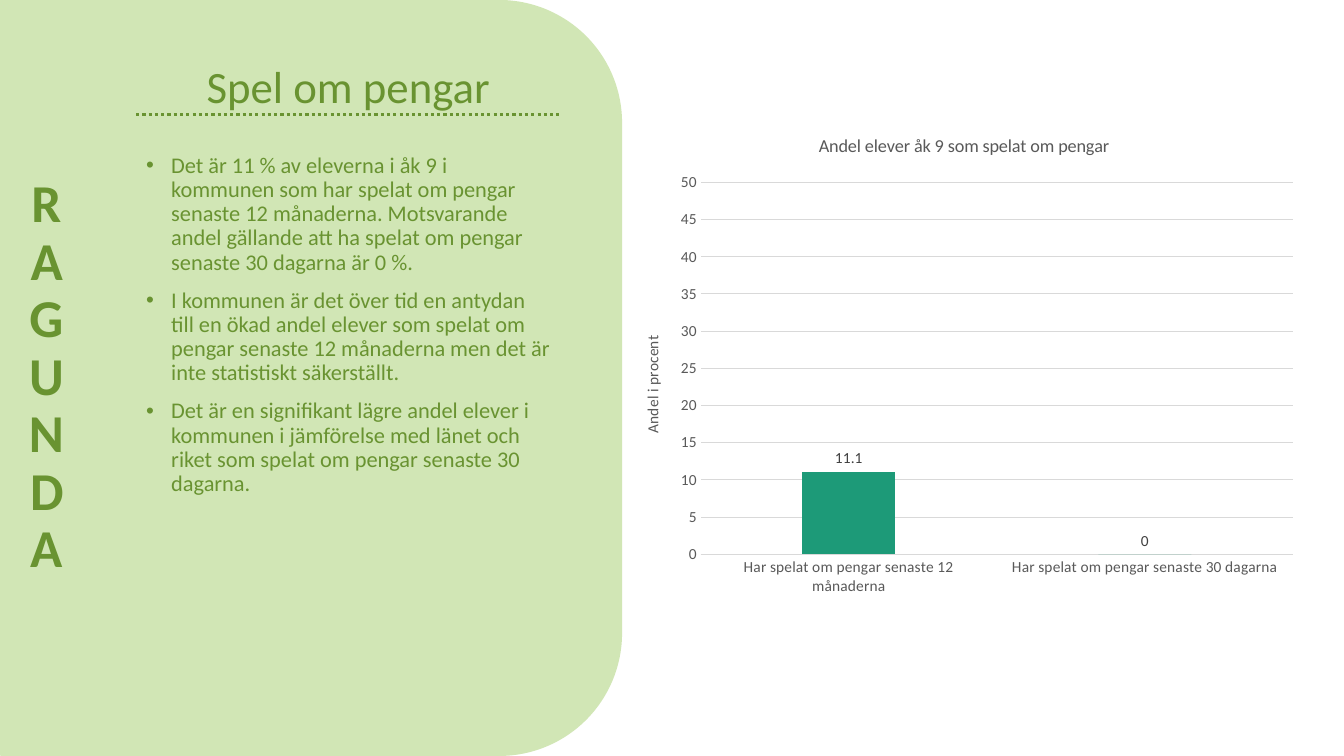
from lxml import etree
from pptx import Presentation
from pptx.chart.data import CategoryChartData
from pptx.dml.color import RGBColor
from pptx.enum.chart import XL_CHART_TYPE, XL_LABEL_POSITION, XL_TICK_MARK
from pptx.enum.dml import MSO_LINE
from pptx.enum.shapes import MSO_CONNECTOR, MSO_SHAPE
from pptx.enum.text import MSO_ANCHOR, PP_ALIGN
from pptx.oxml.ns import qn
from pptx.util import Inches, Pt

FONT = "Calibri"
GREEN, PALE_GREEN, TEAL = "699331", "D1E6B5", "1D9A78"
GREY, DARK_GREY, GRID = "595959", "404040", "D9D9D9"

BULLETS = [
    "Det är 11 % av eleverna i åk 9 i kommunen som har spelat om pengar senaste 12 månaderna. "
    "Motsvarande andel gällande att ha spelat om pengar senaste 30 dagarna är 0 %.",
    "I kommunen är det över tid en antydan till en ökad andel elever som spelat om pengar "
    "senaste 12 månaderna men det är inte statistiskt säkerställt.",
    "Det är en signifikant lägre andel elever i kommunen i jämförelse med länet och riket "
    "som spelat om pengar senaste 30 dagarna.",
]


def color(hex_string):
    return RGBColor.from_string(hex_string)


def style(font, size, hex_string, bold=False):
    font.name = FONT
    font.size = Pt(size)
    font.bold = bold
    font.color.rgb = color(hex_string)


def add_panel(s, x, y, w, h):
    panel = s.shapes.add_shape(MSO_SHAPE.ROUNDED_RECTANGLE, Inches(x), Inches(y), Inches(w), Inches(h))
    panel.shadow.inherit = False
    panel.fill.solid()
    panel.fill.fore_color.rgb = color(PALE_GREEN)
    panel.line.fill.background()


def add_heading(s, text, x, y, w, h, size, anchor, bold=False):
    tf = s.shapes.add_textbox(Inches(x), Inches(y), Inches(w), Inches(h)).text_frame
    tf.word_wrap = True
    tf.vertical_anchor = anchor
    p = tf.paragraphs[0]
    p.text = text
    p.alignment = PP_ALIGN.CENTER
    p.line_spacing = 0.9
    style(p.runs[0].font, size, GREEN, bold)
    return tf


def add_vertical_name(s, text, x, y, w, h):
    tf = add_heading(s, text, x, y, w, h, 38, MSO_ANCHOR.BOTTOM, bold=True)
    # Stack the letters upright
    tf._txBody.bodyPr.set("vert", "wordArtVert")


def add_bullets(s, x, y, w, h):
    box = s.shapes.add_shape(MSO_SHAPE.RECTANGLE, Inches(x), Inches(y), Inches(w), Inches(h))
    box.shadow.inherit = False
    box.fill.solid()
    box.fill.fore_color.rgb = color(PALE_GREEN)
    box.line.fill.background()
    tf = box.text_frame
    tf.word_wrap = True
    tf.vertical_anchor = MSO_ANCHOR.TOP
    tf.text = "\n".join(BULLETS)
    for p in tf.paragraphs:
        p.alignment = PP_ALIGN.LEFT
        p.line_spacing = 0.9
        p.space_before = Pt(10)
        style(p.runs[0].font, 16, GREEN)
        pPr = p._p.get_or_add_pPr()
        pPr.set("marL", str(Inches(0.25)))
        pPr.set("indent", str(-Inches(0.25)))
        etree.SubElement(pPr, qn("a:buFont")).set("typeface", "Arial")
        etree.SubElement(pPr, qn("a:buChar")).set("char", "•")


def add_rule(s, x, y, w):
    rule = s.shapes.add_connector(MSO_CONNECTOR.STRAIGHT, Inches(x), Inches(y), Inches(x + w), Inches(y))
    rule.line.color.rgb = color(GREEN)
    rule.line.width = Pt(2.25)
    rule.line.dash_style = MSO_LINE.ROUND_DOT
    etree.SubElement(rule._element.spPr, qn("a:effectLst"))


def set_title(owner, text, size):
    tf = (owner.chart_title if hasattr(owner, "chart_title") else owner.axis_title).text_frame
    tf.text = text
    style(tf.paragraphs[0].runs[0].font, size, GREY)


def add_gambling_chart(s, x, y, w, h):
    data = CategoryChartData()
    data.categories = [f"Har spelat om pengar senaste {period}" for period in ("12 månaderna", "30 dagarna")]
    data.add_series("Andel i procent", (11.1, 0))
    chart = s.shapes.add_chart(
        XL_CHART_TYPE.COLUMN_CLUSTERED, Inches(x), Inches(y), Inches(w), Inches(h), data).chart
    style(chart.font, 11, GREY)
    chart.has_legend = False
    set_title(chart, "Andel elever åk 9 som spelat om pengar", 13)

    # Axes
    cat_axis, val_axis = chart.category_axis, chart.value_axis
    for axis in (cat_axis, val_axis):
        axis.major_tick_mark = axis.minor_tick_mark = XL_TICK_MARK.NONE
        style(axis.tick_labels.font, 11, GREY)
    set_title(val_axis, "Andel i procent", 11)
    val_axis.minimum_scale, val_axis.maximum_scale, val_axis.major_unit = 0, 50, 5
    val_axis.format.line.fill.background()
    for line in (cat_axis.format.line, val_axis.major_gridlines.format.line):
        line.color.rgb = color(GRID)
        line.width = Pt(0.75)

    # Columns and value labels
    plot = chart.plots[0]
    plot.gap_width, plot.overlap = 219, -27
    plot.vary_by_categories = False
    series = plot.series[0]
    series.format.fill.solid()
    series.format.fill.fore_color.rgb = color(TEAL)
    labels = series.data_labels
    labels.show_value = True
    labels.position = XL_LABEL_POSITION.OUTSIDE_END
    style(labels.font, 11, DARK_GREY)


def main():
    prs = Presentation()
    prs.slide_width, prs.slide_height = Inches(13.33), Inches(7.5)
    s = prs.slides.add_slide(prs.slide_layouts[6])
    add_panel(s, -1.14, 0, 7.31, 7.5)
    add_heading(s, "Spel om pengar", 0.65, 0.36, 5.61, 1.05, 32, MSO_ANCHOR.MIDDLE)
    add_bullets(s, 1.35, 1.48, 4.21, 4.19)
    add_vertical_name(s, "RAGUNDA", 0, 0.06, 0.92, 7.38)
    add_gambling_chart(s, 6.16, 1.14, 6.8, 4.87)
    add_rule(s, 1.35, 1.14, 4.21)
    prs.save("out.pptx")


if __name__ == "__main__":
    main()
